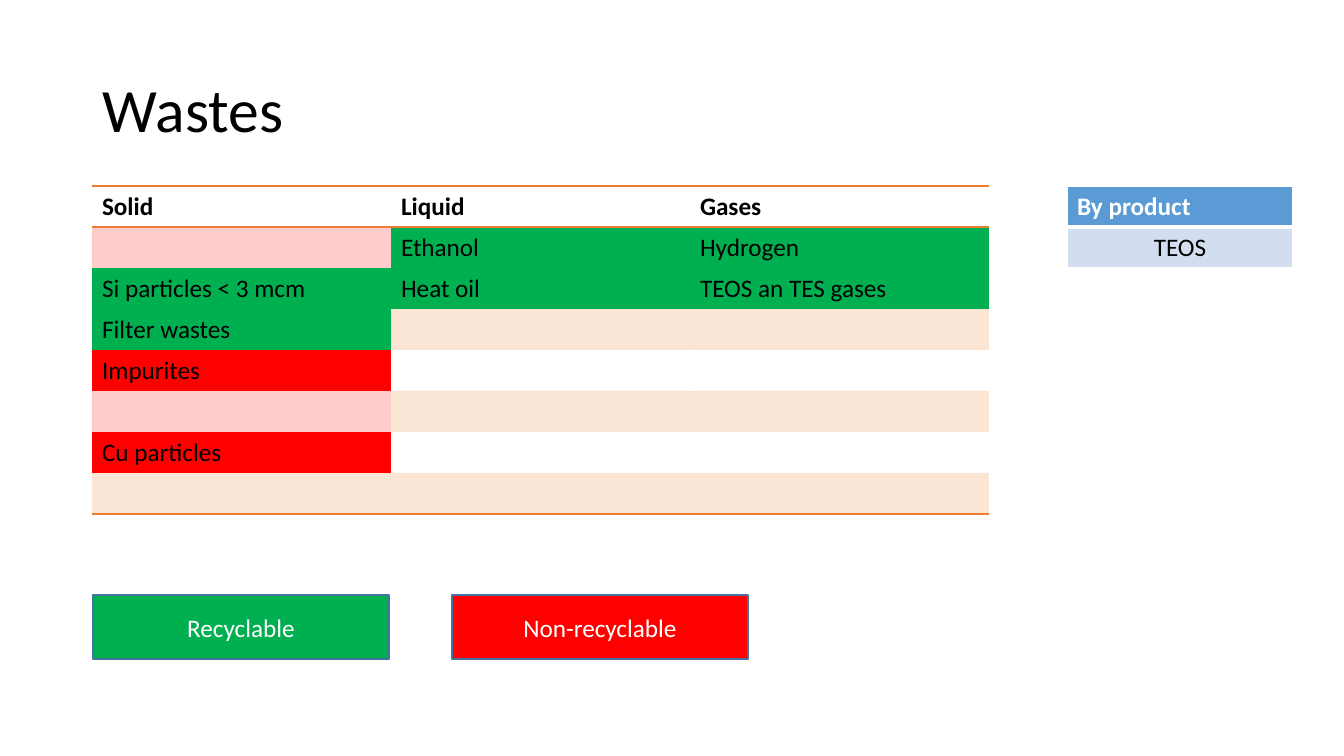
from dataclasses import dataclass

from lxml.etree import SubElement
from pptx import Presentation
from pptx.dml.color import RGBColor as RGB
from pptx.enum.shapes import MSO_SHAPE as SHAPE
from pptx.enum.text import MSO_ANCHOR as ANCHOR, PP_ALIGN as ALIGN
from pptx.oxml import parse_xml
from pptx.oxml.ns import nsdecls, qn
from pptx.util import Emu, Pt

EMU_PER_PX = 914400 / 100.8
NO_GRID_STYLE = "{2D5ABB26-0587-4C30-8999-92F81FD0307C}"
SIDES = ("L", "R", "T", "B")


@dataclass(frozen=True)
class Theme:
    """Colours and type sizes of the slide."""

    font: str = "Calibri"
    title_size: int = 44
    body_size: int = 18
    black: str = "000000"
    white: str = "FFFFFF"
    green: str = "00B050"
    red: str = "FF0000"
    orange: str = "ED7D31"
    blue: str = "5B9BD5"
    pale_blue: str = "D2DEEF"
    outline: str = "43739E"


THEME = Theme()
RECYCLABLE = (THEME.green, 100)
NON_RECYCLABLE = (THEME.red, 100)
PINK = (THEME.red, 20)
PEACH = (THEME.orange, 20)
CLEAR = None

WASTES = [
    [("Solid", CLEAR), ("Liquid", CLEAR), ("Gases", CLEAR)],
    [("", PINK), ("Ethanol", RECYCLABLE), ("Hydrogen", RECYCLABLE)],
    [("Si particles < 3 mcm", RECYCLABLE), ("Heat oil", RECYCLABLE), ("TEOS an TES gases", RECYCLABLE)],
    [("Filter wastes", RECYCLABLE), ("", PEACH), ("", PEACH)],
    [("Impurites", NON_RECYCLABLE), ("", CLEAR), ("", CLEAR)],
    [("", PINK), ("", PEACH), ("", PEACH)],
    [("Cu particles", NON_RECYCLABLE), ("", CLEAR), ("", CLEAR)],
    [("", PEACH), ("", PEACH), ("", PEACH)],
]
BY_PRODUCT = [[("By product", (THEME.blue, 100))], [("TEOS", (THEME.pale_blue, 100))]]


def px(*lengths):
    """Turn pixel lengths into EMU."""
    return [Emu(round(length * EMU_PER_PX)) for length in lengths]


def write(frame, text, color, size=THEME.body_size, bold=False, align=ALIGN.LEFT):
    """Put one formatted line of text in a frame."""
    paragraph = frame.paragraphs[0]
    paragraph.alignment = align
    run = paragraph.add_run()
    run.text = text
    for name, value in {"name": THEME.font, "size": Pt(size), "bold": bold}.items():
        setattr(run.font, name, value)
    run.font.color.rgb = RGB.from_string(color)
    return paragraph


def paint_cell(cell, paint):
    """Fill a cell with a colour at an opacity, or leave it clear."""
    if paint is CLEAR:
        cell.fill.background()
        return
    color, opacity = paint
    cell.fill.solid()
    cell.fill.fore_color.rgb = RGB.from_string(color)
    if opacity < 100:
        tint = next(cell._tc.tcPr.iter(qn("a:srgbClr")))
        SubElement(tint, qn("a:alpha"), val=str(opacity * 1000))


def border_cell(cell, borders):
    """Draw the given sides as (colour, points) and clear the others."""
    for position, side in enumerate(SIDES):
        color, points = borders.get(side, (None, 0))
        stroke = f'<a:solidFill><a:srgbClr val="{color}"/></a:solidFill>' if color else "<a:noFill/>"
        line = f'<a:ln{side} {nsdecls("a")} w="{Pt(points)}">{stroke}</a:ln{side}>'
        cell._tc.get_or_add_tcPr().insert(position, parse_xml(line))


def add_grid(slide, left, top, column_width, row_height, rows, header_color, borders_of, body_align):
    """Add a table whose columns and rows are all equal."""
    row_count, column_count = len(rows), len(rows[0])
    box = px(left, top, column_width * column_count, row_height * row_count)
    table = slide.shapes.add_table(row_count, column_count, *box).table
    table._tbl.tblPr.find(qn("a:tableStyleId")).text = NO_GRID_STYLE
    table.horz_banding = False
    for column in table.columns:
        column.width = px(column_width)[0]
    for row_index, entries in enumerate(rows):
        table.rows[row_index].height = px(row_height)[0]
        is_header = row_index == 0
        for column_index, (text, paint) in enumerate(entries):
            cell = table.cell(row_index, column_index)
            paint_cell(cell, paint)
            border_cell(cell, borders_of(row_index))
            if text:
                write(cell.text_frame, text, header_color if is_header else THEME.black,
                      bold=is_header, align=ALIGN.LEFT if is_header else body_align)


def waste_borders(row_index):
    """Rule the header above and below, and the last row below."""
    rule = (THEME.orange, 1)
    if row_index == 0:
        return {"T": rule, "B": rule}
    if row_index == 1:
        return {"T": rule}
    return {"B": rule} if row_index == len(WASTES) - 1 else {}


def by_product_borders(row_index):
    """Frame cells in white, with a thick rule under the header."""
    borders = dict.fromkeys(SIDES, (THEME.white, 1))
    borders["B" if row_index == 0 else "T"] = (THEME.white, 3)
    return borders


def add_title(slide, text):
    """Add the slide heading."""
    frame = slide.shapes.add_textbox(*px(93, 40, 1159, 146)).text_frame
    for name, value in {"word_wrap": True, "vertical_anchor": ANCHOR.MIDDLE}.items():
        setattr(frame, name, value)
    write(frame, text, THEME.black, THEME.title_size).line_spacing = 0.9


def add_legend_key(slide, left, text, color):
    """Add one outlined legend box."""
    key = slide.shapes.add_shape(SHAPE.RECTANGLE, *px(left, 595, 296, 64))
    key.shadow.inherit = False
    key.fill.solid()
    key.fill.fore_color.rgb = RGB.from_string(color)
    key.line.color.rgb = RGB.from_string(THEME.outline)
    key.line.width = Pt(1)
    key.text_frame.vertical_anchor = ANCHOR.MIDDLE
    write(key.text_frame, text, THEME.white, align=ALIGN.CENTER)


def main():
    """Build the wastes slide."""
    deck = Presentation()
    deck.slide_width, deck.slide_height = px(1344, 756)
    slide = deck.slides.add_slide(deck.slide_layouts[6])
    add_title(slide, "Wastes")
    add_grid(slide, 92, 186, 299, 41, WASTES, THEME.black, waste_borders, ALIGN.LEFT)
    add_grid(slide, 1067, 186, 226, 41, BY_PRODUCT, THEME.white, by_product_borders, ALIGN.CENTER)
    keys = [("Recyclable", THEME.green), ("Non-recyclable", THEME.red)]
    for index, (text, color) in enumerate(keys):
        add_legend_key(slide, 93 + 359 * index, text, color)
    deck.save("out.pptx")


if __name__ == "__main__":
    main()
